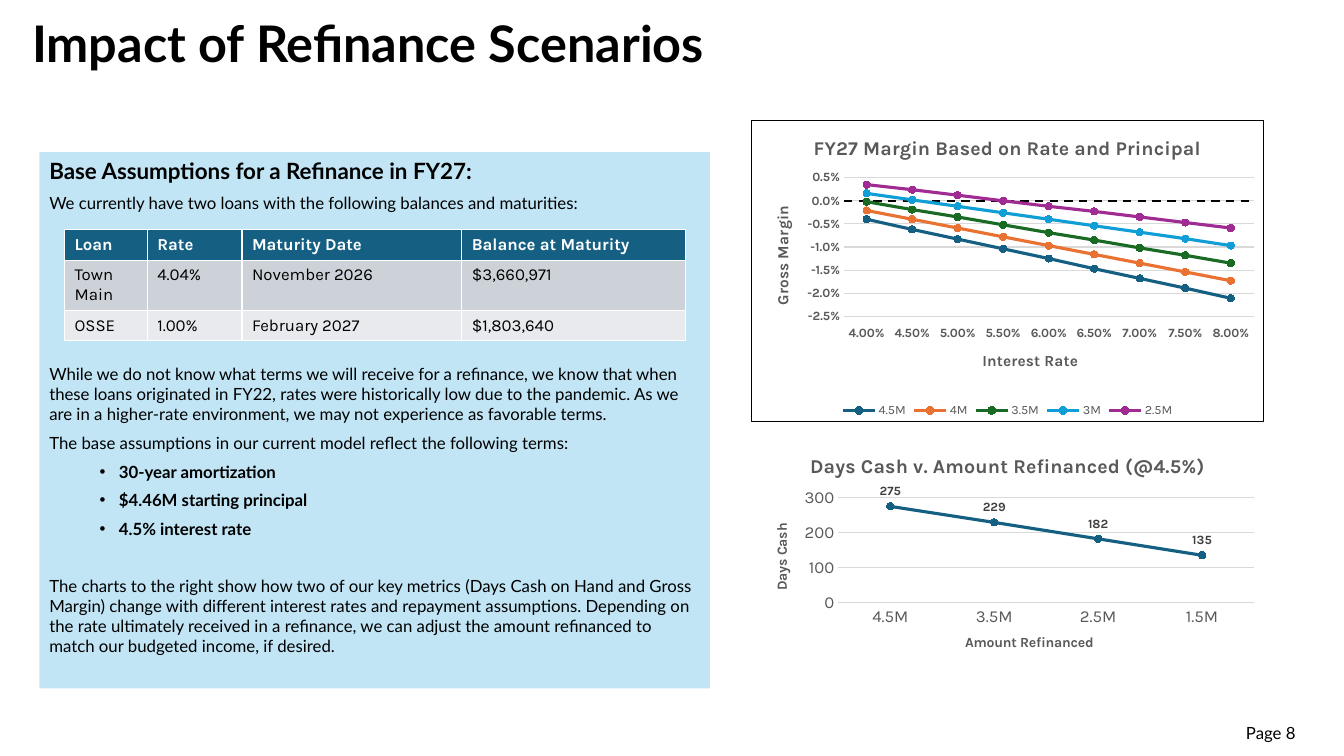
from dataclasses import dataclass
from lxml.etree import SubElement
from pptx import Presentation
from pptx.chart.data import CategoryChartData
from pptx.dml.color import RGBColor
from pptx.enum.chart import (XL_CHART_TYPE, XL_LABEL_POSITION, XL_LEGEND_POSITION,
                             XL_MARKER_STYLE, XL_TICK_LABEL_POSITION, XL_TICK_MARK)
from pptx.enum.dml import MSO_LINE
from pptx.enum.shapes import MSO_SHAPE
from pptx.enum.text import MSO_ANCHOR, PP_ALIGN
from pptx.oxml import parse_xml
from pptx.oxml.ns import nsdecls, qn
from pptx.util import Pt

PX = 9144  # one hundredth of an inch


@dataclass(frozen=True)
class Theme:
    body_font: str = "Lato"
    data_font: str = "Karla"
    black: str = "000000"
    white: str = "FFFFFF"
    panel: str = "C1E5F5"
    bands: tuple = ("156082", "CCD2D8", "E8EAED")
    grey: str = "595959"
    label: str = "404040"
    grid: str = "D9D9D9"
    series: tuple = ("156082", "E97132", "196B24", "0F9ED5", "A02B93")
    title: int = 36
    heading: int = 16
    chart_title: int = 14
    body: int = 12
    axis_title: int = 11
    small_title: int = 10
    small: int = 9


THEME = Theme()


def px(*lengths):
    return [length * PX for length in lengths]


def style_font(font, size, color=THEME.black, bold=False, name=THEME.body_font):
    font.size, font.bold, font.name = Pt(size), bold, name
    font.color.rgb = RGBColor.from_string(color)


def style_line(line, color, width):
    line.color.rgb = RGBColor.from_string(color)
    line.width = Pt(width)


def style_fill(fill, color):
    fill.solid()
    fill.fore_color.rgb = RGBColor.from_string(color)


def add_text(frame, text, first=False, before=0, bullet=False, **font_format):
    para = frame.paragraphs[0] if first else frame.add_paragraph()
    para.alignment = PP_ALIGN.LEFT
    if before:
        para.space_before = Pt(before)
    if bullet:
        properties = para._p.get_or_add_pPr()
        properties.set("marL", str(69 * PX))
        properties.set("indent", str(-19 * PX))
        SubElement(properties, qn("a:buFont")).set("typeface", "Arial")
        SubElement(properties, qn("a:buChar")).set("char", "•")
    span = para.add_run()
    span.text = text
    style_font(span.font, **font_format)


def add_label(page, box, text, **font_format):
    frame = page.shapes.add_textbox(*px(*box)).text_frame
    frame.word_wrap = True
    add_text(frame, text, first=True, **font_format)


def add_loan_table(page, left, top):
    rows = [("Loan", "Rate", "Maturity Date", "Balance at Maturity"),
            ("Town Main", "4.04%", "November 2026", "$3,660,971"),
            ("OSSE", "1.00%", "February 2027", "$1,803,640")]
    widths, heights = (82, 94, 218, 222), (30, 50, 30)
    table = page.shapes.add_table(len(rows), len(widths),
                                  *px(left, top, sum(widths), sum(heights))).table
    for column, width in zip(table.columns, widths):
        column.width = width * PX
    for index, (values, height) in enumerate(zip(rows, heights)):
        table.rows[index].height = height * PX
        header = index == 0
        for cell, value in zip(table.rows[index].cells, values):
            style_fill(cell.fill, THEME.bands[index])
            add_text(cell.text_frame, value, first=True, size=THEME.body, bold=header,
                     color=THEME.white if header else THEME.black, name=THEME.data_font)


def add_assumptions(page, box):
    left, top, width, height = box
    panel = page.shapes.add_shape(MSO_SHAPE.RECTANGLE, *px(*box))
    panel.shadow.inherit = False
    style_fill(panel.fill, THEME.panel)
    panel.line.fill.background()
    frame = panel.text_frame
    frame.word_wrap = True
    frame.vertical_anchor = MSO_ANCHOR.TOP
    add_text(frame, "Base Assumptions for a Refinance in FY27:", first=True,
             size=THEME.heading, bold=True)
    # Large gaps leave room for the table and set off the closing paragraph
    paragraphs = [
        ("We currently have two loans with the following balances and maturities:", 6, False),
        ("While we do not know what terms we will receive for a refinance, we know that when "
         "these loans originated in FY22, rates were historically low due to the pandemic. As we "
         "are in a higher-rate environment, we may not experience as favorable terms.", 108, False),
        ("The base assumptions in our current model reflect the following terms:", 6, False),
        ("30-year amortization", 6, True),
        ("$4.46M starting principal", 6, True),
        ("4.5% interest rate", 6, True),
        ("The charts to the right show how two of our key metrics (Days Cash on Hand and Gross "
         "Margin) change with different interest rates and repayment assumptions. Depending on "
         "the rate ultimately received in a refinance, we can adjust the amount refinanced to "
         "match our budgeted income, if desired.", 26.4, False)]
    for text, before, term in paragraphs:
        add_text(frame, text, before=before, bullet=term, bold=term, size=THEME.body)
    add_loan_table(page, left + 25, top + 77)


def set_title(owner, text, size):
    owner.has_title = True
    frame = owner.title if hasattr(owner, "title") else owner.axis_title
    owner_frame = (owner.chart_title if hasattr(owner, "chart_title") else frame).text_frame
    owner_frame.text = text
    style_font(owner_frame.paragraphs[0].runs[0].font, size, THEME.grey, True, THEME.data_font)


def set_axis(axis, title, title_size, label_size, bold):
    axis.has_title = True
    frame = axis.axis_title.text_frame
    frame.text = title
    style_font(frame.paragraphs[0].runs[0].font, title_size, THEME.grey, True, THEME.data_font)
    axis.major_tick_mark = axis.minor_tick_mark = XL_TICK_MARK.NONE
    style_font(axis.tick_labels.font, label_size, THEME.grey, bold, THEME.data_font)


def add_line_chart(page, box, title, data, axis_titles, title_size, label_size, bold,
                   scale, plot_box):
    chart = page.shapes.add_chart(XL_CHART_TYPE.LINE_MARKERS, *px(*box), data).chart
    style_font(chart.font, THEME.small_title, name=THEME.data_font)
    chart.has_legend = False
    chart.has_title = True
    frame = chart.chart_title.text_frame
    frame.text = title
    style_font(frame.paragraphs[0].runs[0].font, THEME.chart_title, THEME.grey, True,
               THEME.data_font)
    chart.chart_title.include_in_layout = False
    # Axes and grid
    for axis, axis_title in zip((chart.category_axis, chart.value_axis), axis_titles):
        set_axis(axis, axis_title, title_size, label_size, bold)
    values = chart.value_axis
    values.minimum_scale, values.maximum_scale, values.major_unit = scale
    values.format.line.fill.background()
    style_line(values.major_gridlines.format.line, THEME.grid, 0.75)
    # Series
    chart.plots[0].vary_by_categories = False
    for series, color in zip(chart.plots[0].series, THEME.series):
        series.smooth = False
        style_line(series.format.line, color, 2.25)
        series.marker.style, series.marker.size = XL_MARKER_STYLE.CIRCLE, 5
        style_fill(series.marker.format.fill, color)
        style_line(series.marker.format.line, color, 0.75)
    # Inner plot position as shares of the chart
    area = chart.element.find(".//" + qn("c:plotArea"))
    for layout in area.findall(qn("c:layout")):
        area.remove(layout)
    places = "".join(f'<c:{key} val="{value}"/>' for key, value in zip("xywh", plot_box))
    area.insert(0, parse_xml(
        f'<c:layout {nsdecls("c")}><c:manualLayout><c:layoutTarget val="inner"/>'
        f'<c:xMode val="edge"/><c:yMode val="edge"/>{places}</c:manualLayout></c:layout>'))
    return chart


def set_border(chart, line_fill):
    chart.element.find(qn("c:txPr")).addprevious(parse_xml(
        f'<c:spPr {nsdecls("c", "a")}><a:noFill/><a:ln w="9525">{line_fill}</a:ln></c:spPr>'))


def add_margin_chart(page, box):
    data = CategoryChartData(number_format="0.0%")
    data.categories = [0.04, 0.045, 0.05, 0.055, 0.06, 0.065, 0.07, 0.075, 0.08]
    margins = {
        "4.5M": (-.0040, -.0062, -.0083, -.0104, -.0125, -.0147, -.0168, -.0189, -.0211),
        "4M": (-.0021, -.0040, -.0059, -.0078, -.0097, -.0116, -.0135, -.0154, -.0173),
        "3.5M": (-.0002, -.0019, -.0035, -.0052, -.0069, -.0085, -.0102, -.0118, -.0135),
        "3M": (.0016, .0002, -.0012, -.0026, -.0040, -.0054, -.0068, -.0082, -.0097),
        "2.5M": (.0035, .0024, .0012, 0, -.0012, -.0023, -.0035, -.0047, -.0059)}
    for principal, values in margins.items():
        data.add_series(principal, values)
    data.categories.number_format = "0.00%"
    chart = add_line_chart(page, box, "FY27 Margin Based on Rate and Principal", data,
                           ("Interest Rate", "Gross Margin"), THEME.axis_title, THEME.small,
                           True, (-0.025, 0.005, 0.005), (0.18, 0.19, 0.8, 0.46))
    for axis, number_format in ((chart.category_axis, "0.00%"), (chart.value_axis, "0.0%")):
        axis.tick_labels.number_format = number_format
        axis.tick_labels.number_format_is_linked = False
    rates = chart.category_axis
    rates.tick_label_position = XL_TICK_LABEL_POSITION.LOW
    style_line(rates.format.line, THEME.black, 1.5)
    rates.format.line.dash_style = MSO_LINE.DASH
    chart.has_legend = True
    chart.legend.position = XL_LEGEND_POSITION.BOTTOM
    chart.legend.include_in_layout = False
    style_font(chart.legend.font, THEME.small, THEME.grey, name=THEME.data_font)
    set_border(chart, f'<a:solidFill><a:srgbClr val="{THEME.black}"/></a:solidFill>')


def add_cash_chart(page, box):
    data = CategoryChartData()
    data.categories = ["4.5M", "3.5M", "2.5M", "1.5M"]
    data.add_series("Series 1", (275, 229, 182, 135))
    chart = add_line_chart(page, box, "Days Cash v. Amount Refinanced (@4.5%)", data,
                           ("Amount Refinanced", "Days Cash"), THEME.small_title, THEME.body,
                           False, (0, 300, 100), (0.17, 0.25, 0.81, 0.45))
    style_line(chart.category_axis.format.line, THEME.grid, 0.75)
    labels = chart.plots[0].series[0].data_labels
    labels.show_value = True
    labels.position = XL_LABEL_POSITION.ABOVE
    style_font(labels.font, THEME.small, THEME.label, True, THEME.data_font)
    set_border(chart, "<a:noFill/>")


def main():
    deck = Presentation()
    deck.slide_width, deck.slide_height = px(1333, 750)
    page = deck.slides.add_slide(deck.slide_layouts[6])
    add_label(page, (1226, 712, 87, 30), "Page 8", size=THEME.body)
    add_label(page, (22, 7, 777, 71), "Impact of Refinance Scenarios",
              size=THEME.title, bold=True)
    add_assumptions(page, (39, 151, 665, 532))
    add_margin_chart(page, (745, 119, 509, 300))
    add_cash_chart(page, (745, 436, 509, 231))
    deck.save("out.pptx")


if __name__ == "__main__":
    main()
